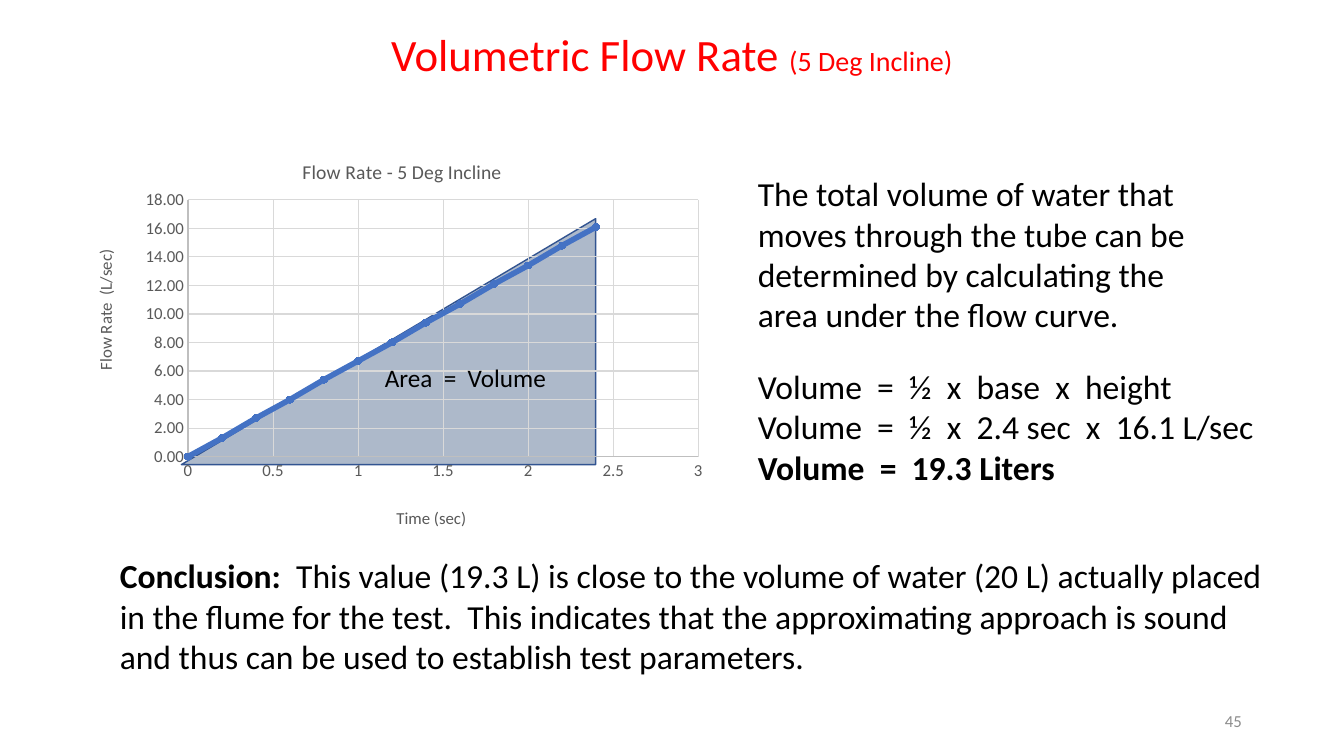
from dataclasses import dataclass

from lxml.etree import Element, SubElement
from pptx import Presentation
from pptx.chart.data import XyChartData
from pptx.dml.color import RGBColor as RGB
from pptx.enum.chart import XL_CHART_TYPE as Kind, XL_MARKER_STYLE as Mark
from pptx.enum.chart import XL_TICK_MARK as Tick
from pptx.enum.shapes import MSO_SHAPE as Form
from pptx.enum.text import MSO_ANCHOR as Anchor, PP_ALIGN as Align
from pptx.oxml.ns import qn
from pptx.util import Pt


@dataclass(frozen=True)
class Theme:
    face: str = "Calibri"
    ink: str = "000000"
    red: str = "FF0000"
    gray: str = "595959"
    pale: str = "8C8C8C"
    grid: str = "D9D9D9"
    axis: str = "BFBFBF"
    blue: str = "4472C4"
    area: str = "ADB9CA"
    edge: str = "325491"
    head: int = 32
    body: int = 24
    sub: int = 20
    label: int = 18
    chart: int = 14
    small: int = 12


T = Theme()
FLOW = [0, 1.3, 2.7, 4, 5.4, 6.7, 8, 9.4, 10.7, 12.1, 13.4, 14.8, 16.1]
STEP = 0.2  # seconds between readings


def style(font, size, color, bold=False):
    font.name, font.size, font.bold = T.face, Pt(size), bold
    font.color.rgb = RGB.from_string(color)


def stroke(line, color, width):
    line.color.rgb = RGB.from_string(color)
    line.width = Pt(width)


def add_text(slide, box, paras, align=Align.LEFT, anchor=Anchor.TOP):
    """Each paragraph is a list of (text, size, color, bold) runs."""
    frame = slide.shapes.add_textbox(*map(Pt, box)).text_frame
    frame.word_wrap, frame.vertical_anchor = True, anchor
    for i, runs in enumerate(paras):
        para = frame.add_paragraph() if i else frame.paragraphs[0]
        para.alignment = align
        for text, *look in runs:
            run = para.add_run()
            run.text = text
            style(run.font, *look)


def add_area(slide, box):
    shape = slide.shapes.add_shape(Form.RIGHT_TRIANGLE, *map(Pt, box))
    shape.shadow.inherit = False
    shape.fill.solid()
    shape.fill.fore_color.rgb = RGB.from_string(T.area)
    stroke(shape.line, T.edge, 1)
    shape._element.spPr.find(qn("a:xfrm")).set("flipH", "1")


def place(node, **spots):
    """Fix a chart part at fractions of the chart's size."""
    old = node.find(qn("c:layout"))
    if old is not None:
        node.remove(old)
    layout = Element(qn("c:layout"))
    node.insert(0 if node.find(qn("c:tx")) is None else 1, layout)
    manual = SubElement(layout, qn("c:manualLayout"))
    if "w" in spots:
        SubElement(manual, qn("c:layoutTarget")).set("val", "inner")
    for key in ("x", "y"):
        SubElement(manual, qn(f"c:{key}Mode")).set("val", "edge")
    for key, spot in spots.items():
        SubElement(manual, qn(f"c:{key}")).set("val", str(spot))


def set_title(title, text, size, x, y):
    run = title.text_frame.paragraphs[0].add_run()
    run.text = text
    style(run.font, size, T.gray)
    place(title._element, x=x, y=y)


def set_axis(axis, text, top, unit, form, x, y):
    axis.minimum_scale, axis.maximum_scale, axis.major_unit = 0, top, unit
    axis.major_tick_mark = axis.minor_tick_mark = Tick.NONE
    axis.has_major_gridlines = True
    stroke(axis.major_gridlines.format.line, T.grid, 0.75)
    stroke(axis.format.line, T.axis, 0.75)
    style(axis.tick_labels.font, T.small, T.gray)
    axis.tick_labels.number_format = form
    axis.tick_labels.number_format_is_linked = False
    set_title(axis.axis_title, text, T.small, x, y)


def add_plot(slide, box):
    data = XyChartData()
    points = data.add_series("Series 1")
    for i, rate in enumerate(FLOW):
        points.add_data_point(round(i * STEP, 1), rate)
    chart = slide.shapes.add_chart(
        Kind.XY_SCATTER_LINES, *map(Pt, box), data).chart
    style(chart.font, T.small, T.gray)
    chart.has_legend = False
    chart.has_title = True
    set_title(chart.chart_title, "Flow Rate - 5 Deg Incline", T.chart, 0.34, 0.05)
    set_axis(chart.category_axis, "Time (sec)", 3, 0.5, "General", 0.49, 0.92)
    set_axis(chart.value_axis, "Flow Rate  (L/sec)", 18, 2, "0.00", 0.01, 0.28)
    place(chart._chartSpace.chart.plotArea, x=0.164, y=0.164, w=0.81, h=0.64)

    # Flow curve
    plot = chart.plots[0]
    plot.vary_by_categories = False
    curve = plot.series[0]
    curve.smooth = False
    stroke(curve.format.line, T.blue, 4)
    curve.marker.style, curve.marker.size = Mark.CIRCLE, 5
    curve.marker.format.fill.solid()
    curve.marker.format.fill.fore_color.rgb = RGB.from_string(T.blue)
    stroke(curve.marker.format.line, T.blue, 0.75)


def main():
    deck = Presentation()
    deck.slide_width, deck.slide_height = Pt(960), Pt(540)
    slide = deck.slides.add_slide(deck.slide_layouts[6])
    plain, bold = (T.body, T.ink), (T.body, T.ink, True)

    # Shaded area under the curve
    add_area(slide, (129.6, 156.2, 295.9, 175.7))

    # Volume calculation
    add_text(slide, (534.2, 120.2, 349.2, 123.8), [
        [("The total volume of water that moves through the tube can be "
          "determined by calculating the area under the flow curve.", *plain)]])
    add_text(slide, (534.2, 257.8, 392.4, 94.3), [
        [("Volume  =  ½  x  base  x  height", *plain)],
        [("Volume  =  ½  x  2.4 sec  x  16.1 L/sec", *plain)],
        [("Volume  =  19.3 Liters", *bold)]])

    # Conclusion
    add_text(slide, (78.5, 393.1, 833, 94.3), [
        [("Conclusion:  ", *bold),
         ("This value (19.3 L) is close to the volume of water (20 L) actually "
          "placed in the flume for the test.  This indicates that the "
          "approximating approach is sound and thus can be used to establish "
          "test parameters.", *plain)]])

    # Heading
    add_text(slide, (110.9, 15.8, 738, 46.1), [
        [("Volumetric Flow Rate ", T.head, T.red),
         ("(5 Deg Incline)", T.sub, T.red)]], Align.CENTER)

    # Chart and its label
    add_plot(slide, (60.5, 95.8, 450, 286.6))
    add_text(slide, (267.8, 255.6, 145.4, 28.8),
             [[("Area  =  Volume", T.label, T.ink)]])

    # Page number
    add_text(slide, (678.2, 500.4, 216, 28.8),
             [[("45", T.small, T.pale)]], Align.RIGHT, Anchor.MIDDLE)

    deck.save("out.pptx")


if __name__ == "__main__":
    main()
